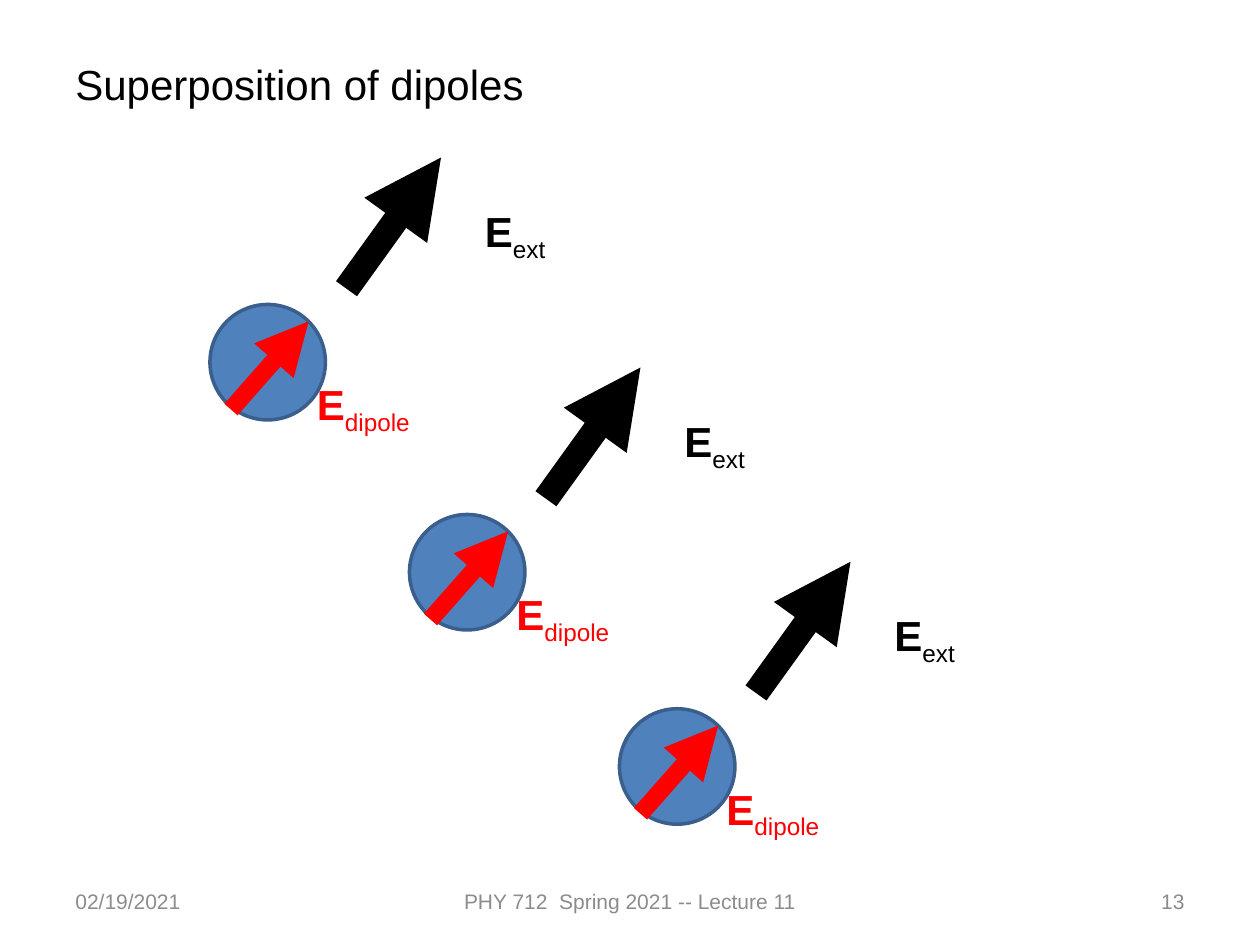
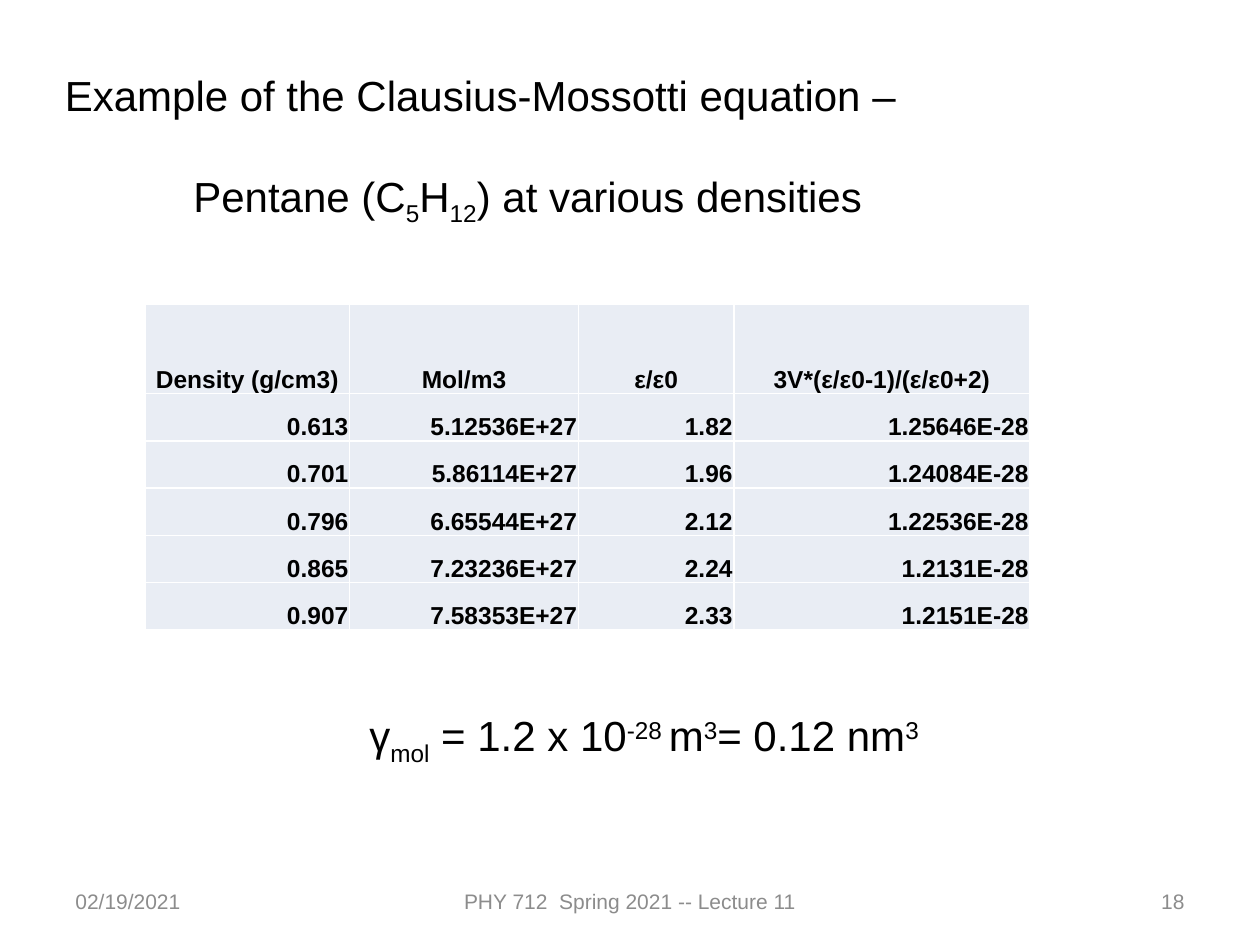
from lxml.etree import SubElement
from pptx import Presentation
from pptx.dml.color import RGBColor as RGB
from pptx.enum.shapes import MSO_CONNECTOR as Wire, MSO_SHAPE as Shape
from pptx.enum.text import MSO_ANCHOR as Anchor, MSO_AUTO_SIZE as Auto, PP_ALIGN as Align
from pptx.oxml import parse_xml
from pptx.oxml.ns import nsdecls, qn
from pptx.util import Inches, Pt

COLORS = {"ink": "000000", "gray": "8C8C8C", "red": "FF0000", "ball": "4F81BD",
          "rim": "3A5F8C", "cell": "E9EDF4", "rule": "FFFFFF"}
FONT = "Arial"
SUB, SUP = -25, 30
LEFT, MID, RIGHT = Align.LEFT, Align.CENTER, Align.RIGHT


def tint(name):
    return RGB.from_string(COLORS[name])


def unit(n):
    """Grid of 120 columns by 90 rows, twelve to the inch."""
    return Inches(n / 12)


class Deck:
    def __init__(self):
        self.prs = Presentation()
        self.prs.slide_width, self.prs.slide_height = unit(120), unit(90)
        self.slide = None

    def page(self, number):
        self.slide = self.prs.slides.add_slide(self.prs.slide_layouts[6])
        foot = [(6, 28, "02/19/2021", LEFT),
                (41, 38, "PHY 712  Spring 2021 -- Lecture 11", MID),
                (86, 28, str(number), RIGHT)]
        for x, wide, words, align in foot:
            box = self.text(x, 83.4, wide, 4.8, [[(words, 0)]], "gray", 12, align)
            box.text_frame.auto_size = Auto.NONE
            box.text_frame.vertical_anchor = Anchor.MIDDLE

    def style(self, para, color, size, align, bold=None):
        para.alignment = align
        font = para.font
        font.name, font.size, font.bold = FONT, Pt(size), bold
        font.color.rgb = tint(color)

    def text(self, x, y, wide, high, lines, color="ink", size=24, align=LEFT, bold=None):
        """Each line is a list of (words, baseline); bold marks the full-size runs."""
        box = self.slide.shapes.add_textbox(*map(unit, (x, y, wide, high)))
        frame = box.text_frame
        frame.word_wrap, frame.auto_size = True, Auto.SHAPE_TO_FIT_TEXT
        for i, parts in enumerate(lines):
            para = frame.add_paragraph() if i else frame.paragraphs[0]
            self.style(para, color, size, align)
            for words, base in parts:
                run = para.add_run()
                run.text = words
                if base:
                    run._r.get_or_add_rPr().set("baseline", str(base * 1000))
                elif bold:
                    run.font.bold = True
        return box

    def ball(self, x, y, wide):
        disc = self.slide.shapes.add_shape(Shape.OVAL, *map(unit, (x, y, wide, wide)))
        disc.shadow.inherit = False
        disc.fill.solid()
        disc.fill.fore_color.rgb = tint("ball")
        disc.line.color.rgb = tint("rim")
        disc.line.width = Pt(2)

    def arrow(self, x1, y1, x2, y2, color, width):
        wire = self.slide.shapes.add_connector(Wire.STRAIGHT, *map(unit, (x1, y1, x2, y2)))
        wire.line.color.rgb = tint(color)
        wire.line.width = Pt(width)
        SubElement(wire.line._get_or_add_ln(), qn("a:tailEnd"), type="triangle")
        SubElement(wire._element.spPr, qn("a:effectLst"))

    def table(self, x, y, cols, rows, data):
        frame = self.slide.shapes.add_table(len(rows), len(cols),
                                            *map(unit, (x, y, sum(cols), sum(rows))))
        grid = frame.table
        for col, wide in zip(grid.columns, cols):
            col.width = unit(wide)
        for row, high in zip(grid.rows, rows):
            row.height = unit(high)
        for r, values in enumerate(data):
            for c, value in enumerate(values):
                self.cell(grid.cell(r, c), value, RIGHT if r else MID)

    def cell(self, cell, value, align):
        cell.text = value
        self.style(cell.text_frame.paragraphs[0], "ink", 14, align, True)
        cell.vertical_anchor = Anchor.BOTTOM
        cell.margin_left = cell.margin_right = cell.margin_top = Inches(0.01)
        cell.margin_bottom = 0
        cell.fill.solid()
        cell.fill.fore_color.rgb = tint("cell")
        for i, side in enumerate("LRTB"):
            edge = parse_xml(
                f'<a:ln{side} {nsdecls("a")} w="12700"><a:solidFill>'
                f'<a:srgbClr val="{COLORS["rule"]}"/></a:solidFill></a:ln{side}>')
            cell._tc.get_or_add_tcPr().insert(i, edge)


def dipole(deck, x, y):
    """A ball with its field arrows and labels, placed from the ball's corner."""
    deck.ball(x, y, 11)
    deck.arrow(x + 13, y - 1.5, x + 22, y - 14, "ink", 14.75)
    deck.arrow(x + 2, y + 10, x + 9.4, y + 1.6, "red", 10)
    deck.text(x + 25, y - 10, 13, 6, [[("E", 0), ("ext", SUB)]], bold=True)
    deck.text(x + 9, y + 6.5, 13, 6, [[("E", 0), ("dipole", SUB)]], "red", bold=True)


def main():
    deck = Deck()

    # Three dipoles
    deck.page(13)
    deck.text(6, 5, 90, 6, [[("Superposition of dipoles", 0)]])
    for x, y in [(20, 29), (39, 49), (59, 67.5)]:
        dipole(deck, x, y)

    # Pentane table
    deck.page(18)
    head = deck.text(5, 6, 102, 15.7, [
        [("Example of the Clausius-Mossotti equation –", 0)],
        [("Pentane (C", 0), ("5", SUB), ("H", 0), ("12", SUB), (") at various densities", 0)]])
    second = head.text_frame.paragraphs[1]
    second.space_before = Pt(29)
    second._p.get_or_add_pPr().set("marL", str(Inches(1.02)))

    deck.table(13.8, 29, [19.5, 21.8, 14.8, 28.2], [8.5] + [4.5] * 5, [
        ("Density (g/cm3)", "Mol/m3", "ε/ε0", "3V*(ε/ε0-1)/(ε/ε0+2)"),
        ("0.613", "5.12536E+27", "1.82", "1.25646E-28"),
        ("0.701", "5.86114E+27", "1.96", "1.24084E-28"),
        ("0.796", "6.65544E+27", "2.12", "1.22536E-28"),
        ("0.865", "7.23236E+27", "2.24", "1.2131E-28"),
        ("0.907", "7.58353E+27", "2.33", "1.2151E-28")])

    deck.text(34, 67, 59, 6, [[
        ("γ", 0), ("mol", SUB), (" = 1.2 x 10", 0), ("-28 ", SUP), ("m", 0),
        ("3", SUP), ("= 0.12 nm", 0), ("3", SUP)]])

    deck.prs.save("out.pptx")


if __name__ == "__main__":
    main()
